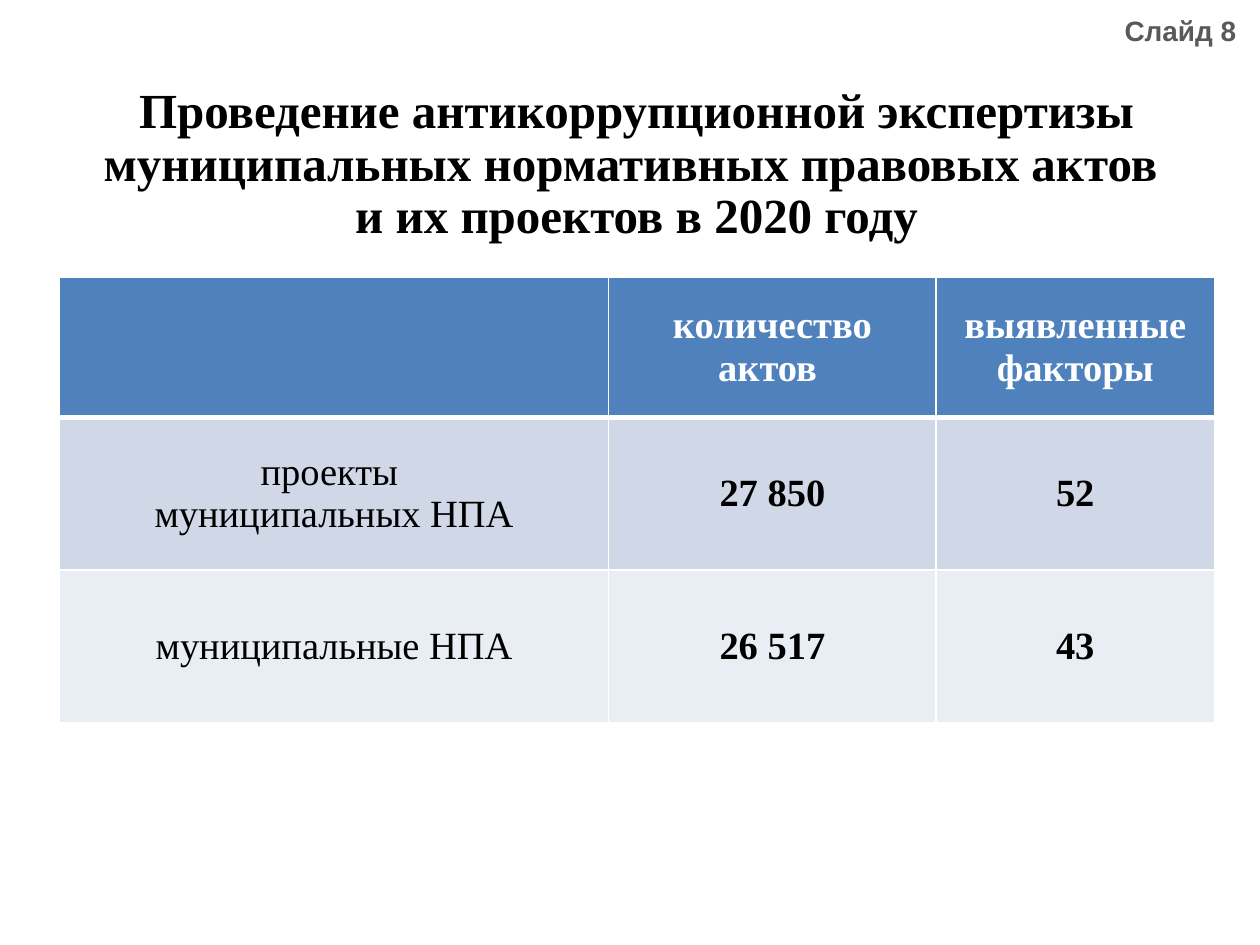
"""Build the slide on anti-corruption review of municipal legal acts in 2020."""
from lxml import etree
from pptx import Presentation
from pptx import util as u
from pptx.dml.color import RGBColor
from pptx.enum import text
from pptx.oxml.ns import qn

TITLE = ("Проведение антикоррупционной экспертизы муниципальных "
         "нормативных правовых актов \vи их проектов в 2020 году")
LABEL = "Слайд 8"
ROWS = [
    ["", "количество актов ", "выявленные факторы"],
    ["проекты \nмуниципальных НПА", "27 850", "52"],
    ["муниципальные НПА", "26 517", "43"],
]
COL_WIDTHS = [11.07, 6.6, 5.61]
ROW_HEIGHTS = [2.82, 3.08, 3.08]

BLACK = RGBColor(0, 0, 0)
WHITE = RGBColor(0xFF, 0xFF, 0xFF)
GREY = RGBColor(0x59, 0x59, 0x59)
ROW_FILLS = [RGBColor(0x4F, 0x81, 0xBD), RGBColor(0xD0, 0xD8, 0xE8), RGBColor(0xE9, 0xED, 0xF4)]
SERIF = "Times New Roman"


def write(tf, content, size=22, font=SERIF, color=BLACK, bold=True,
          align=text.PP_ALIGN.CENTER, spacing=None):
    tf.text = content
    tf.word_wrap = True
    for p in tf.paragraphs:
        p.alignment = align
        if spacing:
            p.line_spacing = spacing
        for r in p.runs:
            r.font.size = u.Pt(size)
            r.font.name = font
            r.font.bold = bold
            r.font.color.rgb = color


def add_borders(cell, bottom, top):
    tcPr = cell._tc.get_or_add_tcPr()
    for side, width in (("L", 1), ("R", 1), ("T", top), ("B", bottom)):
        ln = etree.SubElement(tcPr, qn(f"a:ln{side}"), w=str(u.Pt(width)))
        fill = etree.SubElement(ln, qn("a:solidFill"))
        etree.SubElement(fill, qn("a:srgbClr"), val=str(WHITE))


def add_title(s):
    sp = s.shapes.title
    sp.left, sp.top, sp.width, sp.height = u.Cm(1.4), u.Cm(1.63), u.Cm(22.86), u.Cm(3.4)
    sp.text_frame.vertical_anchor = text.MSO_ANCHOR.MIDDLE
    write(sp.text_frame, TITLE, size=28, spacing=0.9)


def add_acts_table(s):
    table = s.shapes.add_table(len(ROWS), len(COL_WIDTHS), u.Cm(1.2), u.Cm(5.59),
                               u.Cm(sum(COL_WIDTHS)), u.Cm(sum(ROW_HEIGHTS))).table
    for col, width in zip(table.columns, COL_WIDTHS):
        col.width = u.Cm(width)
    for i, (row, height) in enumerate(zip(table.rows, ROW_HEIGHTS)):
        row.height = u.Cm(height)
        for j, cell in enumerate(row.cells):
            cell.vertical_anchor = text.MSO_ANCHOR.MIDDLE
            add_borders(cell, bottom=3 if i == 0 else 1, top=3 if i == 1 else 1)
            cell.fill.solid()
            cell.fill.fore_color.rgb = ROW_FILLS[i]
            write(cell.text_frame, ROWS[i][j], color=BLACK if i else WHITE,
                  bold=i == 0 or j > 0)


def add_label(s):
    sp = s.shapes.add_textbox(u.Cm(21.82), u.Cm(0.15), u.Cm(3.35), u.Cm(0.94))
    write(sp.text_frame, LABEL, size=16, font="Arial", color=GREY, align=text.PP_ALIGN.RIGHT)
    sp.text_frame.auto_size = text.MSO_AUTO_SIZE.SHAPE_TO_FIT_TEXT


def main():
    prs = Presentation()
    prs.slide_width, prs.slide_height = u.Cm(25.4), u.Cm(19.05)
    s = prs.slides.add_slide(prs.slide_layouts[5])
    add_title(s)
    add_acts_table(s)
    add_label(s)
    prs.save("out.pptx")


if __name__ == "__main__":
    main()
